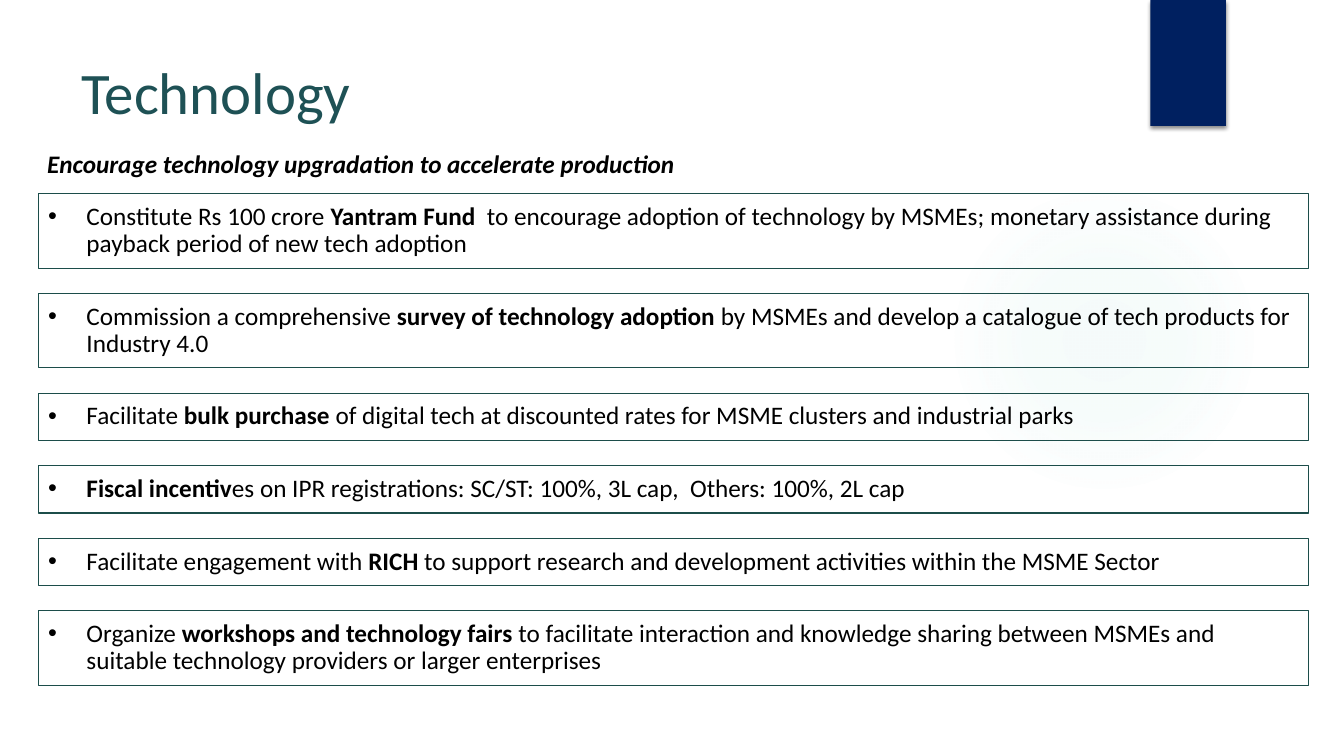
from pptx import Presentation
from pptx import oxml
from pptx import util as u
from pptx.dml import color
from pptx.enum import shapes, text
from pptx.oxml import ns

COLORS = {
    "title": "1E5155",
    "border": "1C4D4A",
    "body": "000000",
    "ribbon": "002060",
    "glow": "7CCEC9",
}
BOX_LEFT, BOX_WIDTH, FIRST_TOP, GAP = 0.38, 12.6, 1.92, 0.25
LINE_HEIGHTS = {1: 0.47, 2: 0.74}

MEASURES = [
    (2, [("Constitute Rs 100 crore ", False), ("Yantram Fund  ", True),
         ("to encourage adoption of technology by MSMEs; monetary assistance during "
          "payback period of new tech adoption", False)]),
    (2, [("Commission a comprehensive ", False), ("survey of technology adoption ", True),
         ("by MSMEs and develop a catalogue of tech products for Industry 4.0", False)]),
    (1, [("Facilitate ", False), ("bulk purchase ", True),
         ("of digital tech at discounted rates for MSME clusters and industrial parks", False)]),
    (1, [("Fiscal incentiv", True),
         ("es on IPR registrations: SC/ST: 100%, 3L cap,  Others: 100%, 2L cap", False)]),
    (1, [("Facilitate engagement with ", False), ("RICH ", True),
         ("to support research and development activities within the MSME Sector", False)]),
    (2, [("Organize ", False), ("workshops and technology fairs ", True),
         ("to facilitate interaction and knowledge sharing between MSMEs and "
          "suitable technology providers or larger enterprises", False)]),
]


class PolicySlide:
    def __init__(self, slide, font="Calibri"):
        self.slide = slide
        self.font = font

    def rgb(self, name):
        return color.RGBColor.from_string(COLORS[name])

    def style(self, run, size, tone, bold=False, italic=False):
        run.font.name = self.font
        run.font.size = u.Pt(size)
        run.font.bold = bold
        run.font.italic = italic
        run.font.color.rgb = self.rgb(tone)

    def shape(self, preset, left, top, width, height):
        added = self.slide.shapes.add_shape(
            preset, u.Inches(left), u.Inches(top), u.Inches(width), u.Inches(height))
        added.shadow.inherit = False
        added.line.fill.background()
        return added

    def glow(self, left, top, diameter):
        halo = self.shape(shapes.MSO_SHAPE.OVAL, left, top, diameter, diameter)
        stops = "".join(
            f'<a:gs pos="{place * 1000}"><a:srgbClr val="{COLORS["glow"]}">'
            f'<a:alpha val="{alpha * 1000}"/></a:srgbClr></a:gs>'
            for place, alpha in [(0, 7), (36, 6), (69, 0)])
        gradient = oxml.parse_xml(
            f'<a:gradFill {ns.nsdecls("a")} rotWithShape="1"><a:gsLst>{stops}</a:gsLst>'
            '<a:path path="circle"><a:fillToRect l="50000" t="50000" r="50000" b="50000"/>'
            '</a:path></a:gradFill>')
        halo.element.spPr.find(ns.qn("a:prstGeom")).addnext(gradient)

    def ribbon(self, left, top, width, height):
        band = self.shape(shapes.MSO_SHAPE.RECTANGLE, left, top, width, height)
        band.fill.solid()
        band.fill.fore_color.rgb = self.rgb("ribbon")
        band.element.spPr.find(ns.qn("a:effectLst")).append(oxml.parse_xml(
            f'<a:outerShdw {ns.nsdecls("a")} blurRad="{u.Pt(3)}" dist="{u.Pt(2)}" '
            'dir="5400000" rotWithShape="0"><a:srgbClr val="000000">'
            '<a:alpha val="45000"/></a:srgbClr></a:outerShdw>'))

    def heading(self, words, left, top, width, height, size, tone, **emphasis):
        box = self.slide.shapes.add_textbox(
            u.Inches(left), u.Inches(top), u.Inches(width), u.Inches(height))
        box.text_frame.word_wrap = True
        box.text_frame.text = words
        self.style(box.text_frame.paragraphs[0].runs[0], size, tone, **emphasis)

    def measure(self, pieces, top, height):
        box = self.shape(shapes.MSO_SHAPE.RECTANGLE, BOX_LEFT, top, BOX_WIDTH, height)
        box.fill.background()
        box.line.color.rgb = self.rgb("border")
        box.line.width = u.Pt(0.75)
        frame = box.text_frame
        frame.word_wrap = True
        frame.auto_size = text.MSO_AUTO_SIZE.SHAPE_TO_FIT_TEXT
        frame.vertical_anchor = text.MSO_ANCHOR.MIDDLE
        frame.margin_left = frame.margin_right = u.Inches(0.1)
        frame.margin_top = frame.margin_bottom = u.Inches(0.1)
        item = frame.paragraphs[0]
        item.alignment = text.PP_ALIGN.LEFT
        item.line_spacing = 0.9
        props = item._p.get_or_add_pPr()
        props.set("marL", str(u.Inches(0.38)))
        props.set("indent", str(-u.Inches(0.38)))
        for bullet in (
                f'<a:buClr {ns.nsdecls("a")}><a:srgbClr val="{COLORS["body"]}"/></a:buClr>',
                f'<a:buFont {ns.nsdecls("a")} typeface="Arial"/>',
                f'<a:buChar {ns.nsdecls("a")} char="•"/>'):
            props.append(oxml.parse_xml(bullet))
        for words, bold in pieces:
            run = item.add_run()
            run.text = words
            self.style(run, 18, "body", bold=bold)


def main():
    deck = Presentation()
    deck.slide_width, deck.slide_height = u.Inches(13.33), u.Inches(7.5)
    technology = PolicySlide(deck.slides.add_slide(deck.slide_layouts[6]))
    technology.glow(9.41, 1.83, 3.08)
    technology.ribbon(11.41, 0, 0.75, 1.25)
    technology.heading("Technology", 0.71, 0.5, 10.29, 1.53, 42, "title")
    technology.heading("Encourage technology upgradation to accelerate production",
                       0.37, 1.42, 9.29, 0.4, 18, "body", bold=True, italic=True)
    top = FIRST_TOP
    for lines, pieces in MEASURES:
        technology.measure(pieces, top, LINE_HEIGHTS[lines])
        top += LINE_HEIGHTS[lines] + GAP
    deck.save("out.pptx")


if __name__ == "__main__":
    main()
